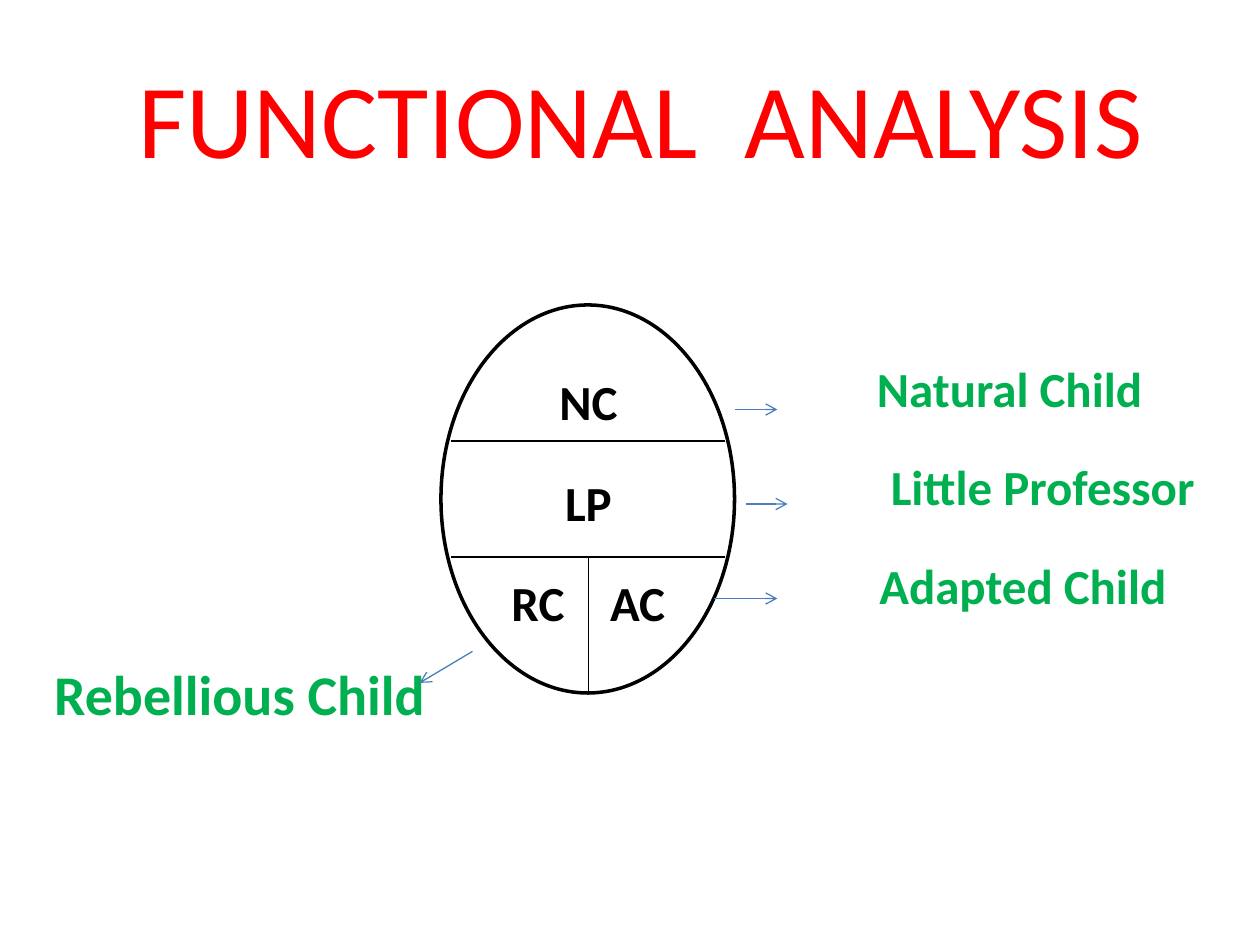
from pptx import Presentation
from pptx.dml.color import RGBColor
from pptx.enum.shapes import MSO_CONNECTOR, MSO_SHAPE
from pptx.enum.text import MSO_ANCHOR, PP_ALIGN
from pptx.oxml.ns import qn
from pptx.util import Inches, Pt
from lxml.etree import SubElement

RED = RGBColor(0xFF, 0x00, 0x00)
GREEN = RGBColor(0x00, 0xB0, 0x50)
BLUE = RGBColor(0x4B, 0x7E, 0xBC)
BLACK = RGBColor(0x00, 0x00, 0x00)
WHITE = RGBColor(0xFF, 0xFF, 0xFF)

LABEL_HEIGHT = 0.6


class SlideBuilder:
    def __init__(self, page, font="Calibri"):
        self.page = page
        self.font = font

    def style_text(self, frame, text, size, color, align, bold=False):
        """Fill a frame with one vertically centred line of styled text."""
        frame.text = text
        frame.vertical_anchor = MSO_ANCHOR.MIDDLE
        para = frame.paragraphs[0]
        para.alignment = align
        for span in para.runs:
            span.font.name = self.font
            span.font.size = Pt(size)
            span.font.bold = bold
            span.font.color.rgb = color

    def title(self, text, left, top, width, height):
        box = self.page.shapes.title
        box.left, box.top = Inches(left), Inches(top)
        box.width, box.height = Inches(width), Inches(height)
        self.style_text(box.text_frame, text, 60, RED, PP_ALIGN.CENTER)

    def label(self, text, left, middle, width, size=28, color=GREEN,
              align=PP_ALIGN.LEFT):
        """Place bold text whose line is centred on the height `middle`."""
        box = self.page.shapes.add_textbox(
            Inches(left), Inches(middle - LABEL_HEIGHT / 2),
            Inches(width), Inches(LABEL_HEIGHT))
        frame = box.text_frame
        frame.word_wrap = True
        frame.margin_left = frame.margin_right = 0
        self.style_text(frame, text, size, color, align, bold=True)

    def ellipse(self, left, top, width, height):
        oval = self.page.shapes.add_shape(
            MSO_SHAPE.OVAL, Inches(left), Inches(top),
            Inches(width), Inches(height))
        oval.shadow.inherit = False
        oval.fill.solid()
        oval.fill.fore_color.rgb = WHITE
        oval.line.color.rgb = BLACK
        oval.line.width = Pt(2)

    def line(self, start, end, color=BLACK, arrow=False):
        link = self.page.shapes.add_connector(
            MSO_CONNECTOR.STRAIGHT, *map(Inches, start + end))
        link.line.color.rgb = color
        link.line.width = Pt(0.75)
        properties = link._element.spPr
        if arrow:
            SubElement(properties.find(qn("a:ln")), qn("a:tailEnd"), type="arrow")
        SubElement(properties, qn("a:effectLst"))


def main():
    deck = Presentation()
    deck.slide_width, deck.slide_height = Inches(10), Inches(7.5)
    slide = SlideBuilder(deck.slides.add_slide(deck.slide_layouts[5]))

    slide.title("FUNCTIONAL  ANALYSIS", 0.5, 0.3, 9.17, 1.25)

    slide.ellipse(3.5, 2.42, 2.33, 3.08)
    for y in (3.5, 4.42):
        slide.line((5.75, y), (3.58, y))
    slide.line((4.67, 4.42), (4.67, 5.5))

    code_width = 0.7
    for code, center, middle in (("NC", 4.67, 3.18), ("LP", 4.67, 3.98),
                                 ("RC", 4.27, 4.78), ("AC", 5.06, 4.78)):
        slide.label(code, center - code_width / 2, middle, code_width,
                    color=BLACK, align=PP_ALIGN.CENTER)

    child_states = (("Natural Child", 6.96), ("Little Professor", 7.07),
                    ("Adapted Child", 6.98))
    for row, (name, left) in enumerate(child_states):
        slide.label(name, left, 3.08 + 0.78 * row, 2.7)
    slide.label("Rebellious Child", 0.43, 5.5, 3.1, size=32)

    for start, end in (((5.83, 3.25), (6.17, 3.25)), ((5.92, 4), (6.25, 4)),
                       ((5.67, 4.75), (6.17, 4.75)), ((3.75, 5.17), (3.33, 5.42))):
        slide.line(start, end, BLUE, arrow=True)

    deck.save("out.pptx")


if __name__ == "__main__":
    main()
